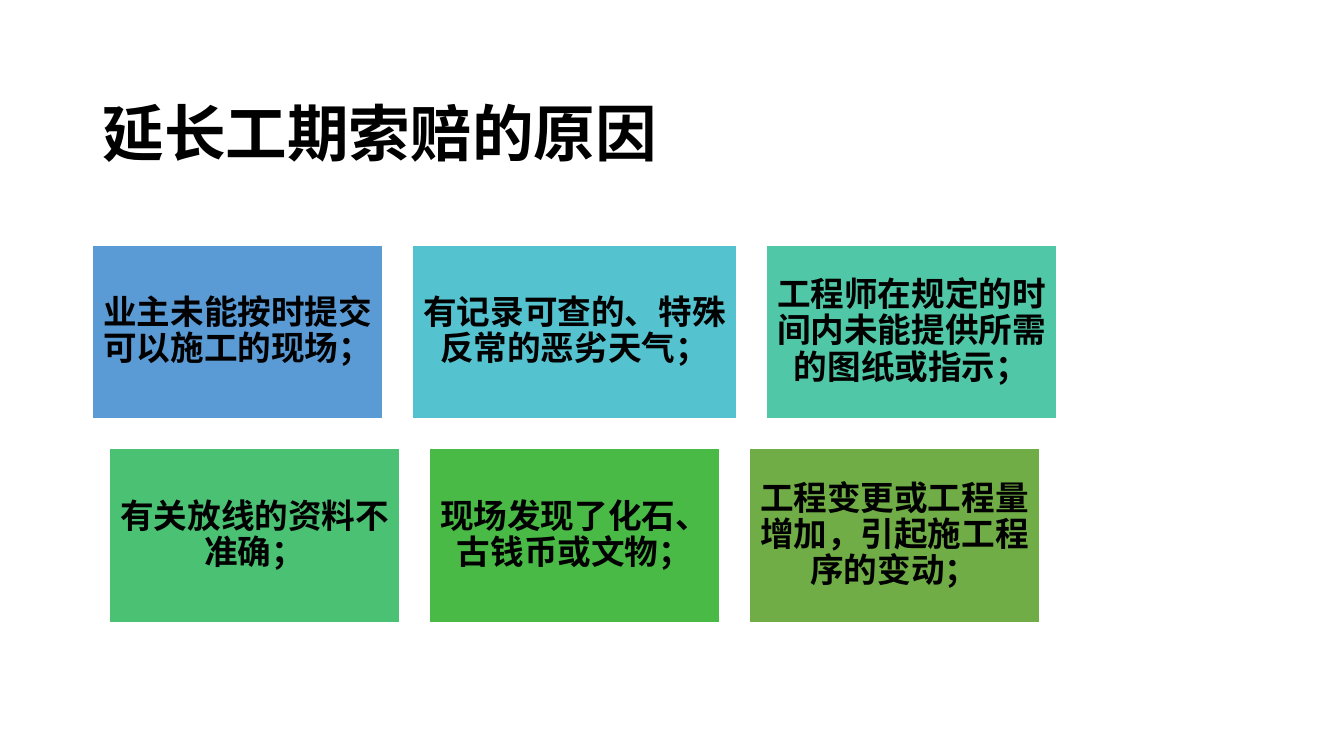
from pptx import Presentation
from pptx.dml.color import RGBColor
from pptx.enum.lang import MSO_LANGUAGE_ID as Language
from pptx.enum.shapes import MSO_SHAPE as Shape
from pptx.enum.text import MSO_ANCHOR as Anchor, MSO_AUTO_SIZE as AutoSize, PP_ALIGN as Align
from pptx.util import Cm, Pt

BLACK = RGBColor(0x00, 0x00, 0x00)
WHITE = RGBColor(0xFF, 0xFF, 0xFF)
BLUE = RGBColor(0x5B, 0x9B, 0xD5)
CYAN = RGBColor(0x55, 0xC3, 0xCF)
TEAL = RGBColor(0x50, 0xC8, 0xA7)
MINT = RGBColor(0x4B, 0xC1, 0x74)
GREEN = RGBColor(0x4A, 0xBA, 0x46)
OLIVE = RGBColor(0x70, 0xAD, 0x47)

NARROW, WIDE, HEIGHT, GAP = 7.32, 8.18, 4.39, 0.74
ROWS_CENTER, ROWS_TOP = 14.48, 6.17
PADDING = Cm(0.25)

REASON_ROWS = [
    [("业主未能按时提交可以施工的现场；", BLUE, NARROW),
     ("有记录可查的、特殊反常的恶劣天气；", CYAN, WIDE),
     ("工程师在规定的时间内未能提供所需的图纸或指示；", TEAL, NARROW)],
    [("有关放线的资料不准确；", MINT, NARROW),
     ("现场发现了化石、古钱币或文物；", GREEN, NARROW),
     ("工程变更或工程量增加，引起施工程序的变动；", OLIVE, NARROW)],
]


def write(frame, text, size, align, line_spacing):
    frame.text = text
    frame.word_wrap = True
    frame.auto_size = AutoSize.NONE
    frame.vertical_anchor = Anchor.MIDDLE
    paragraph = frame.paragraphs[0]
    paragraph.alignment = align
    paragraph.line_spacing = line_spacing
    font = paragraph.runs[0].font
    font.name = "Times New Roman"
    font.size = Pt(size)
    font.bold = True
    font.color.rgb = BLACK
    font.language_id = Language.SIMPLIFIED_CHINESE


prs = Presentation()
prs.slide_width, prs.slide_height = Cm(33.87), Cm(19.05)
slide = prs.slides.add_slide(prs.slide_layouts[5])

title = slide.shapes.title
title.left, title.top, title.width, title.height = Cm(2.33), Cm(1.01), Cm(29.21), Cm(3.68)
write(title.text_frame, "延长工期索赔的原因", 44, Align.LEFT, 1.5)

for row, reasons in enumerate(REASON_ROWS):
    row_width = sum(width for _, _, width in reasons) + GAP * (len(reasons) - 1)
    left = ROWS_CENTER - row_width / 2
    top = ROWS_TOP + row * (HEIGHT + GAP)
    for reason, color, width in reasons:
        card = slide.shapes.add_shape(Shape.RECTANGLE, Cm(left), Cm(top), Cm(width), Cm(HEIGHT))
        card.shadow.inherit = False
        card.fill.solid()
        card.fill.fore_color.rgb = color
        card.line.color.rgb = WHITE
        card.line.width = Pt(1)
        frame = card.text_frame
        frame.margin_left = frame.margin_right = PADDING
        frame.margin_top = frame.margin_bottom = PADDING
        write(frame, reason, 24, Align.CENTER, 0.9)
        left += width + GAP

prs.save("out.pptx")
